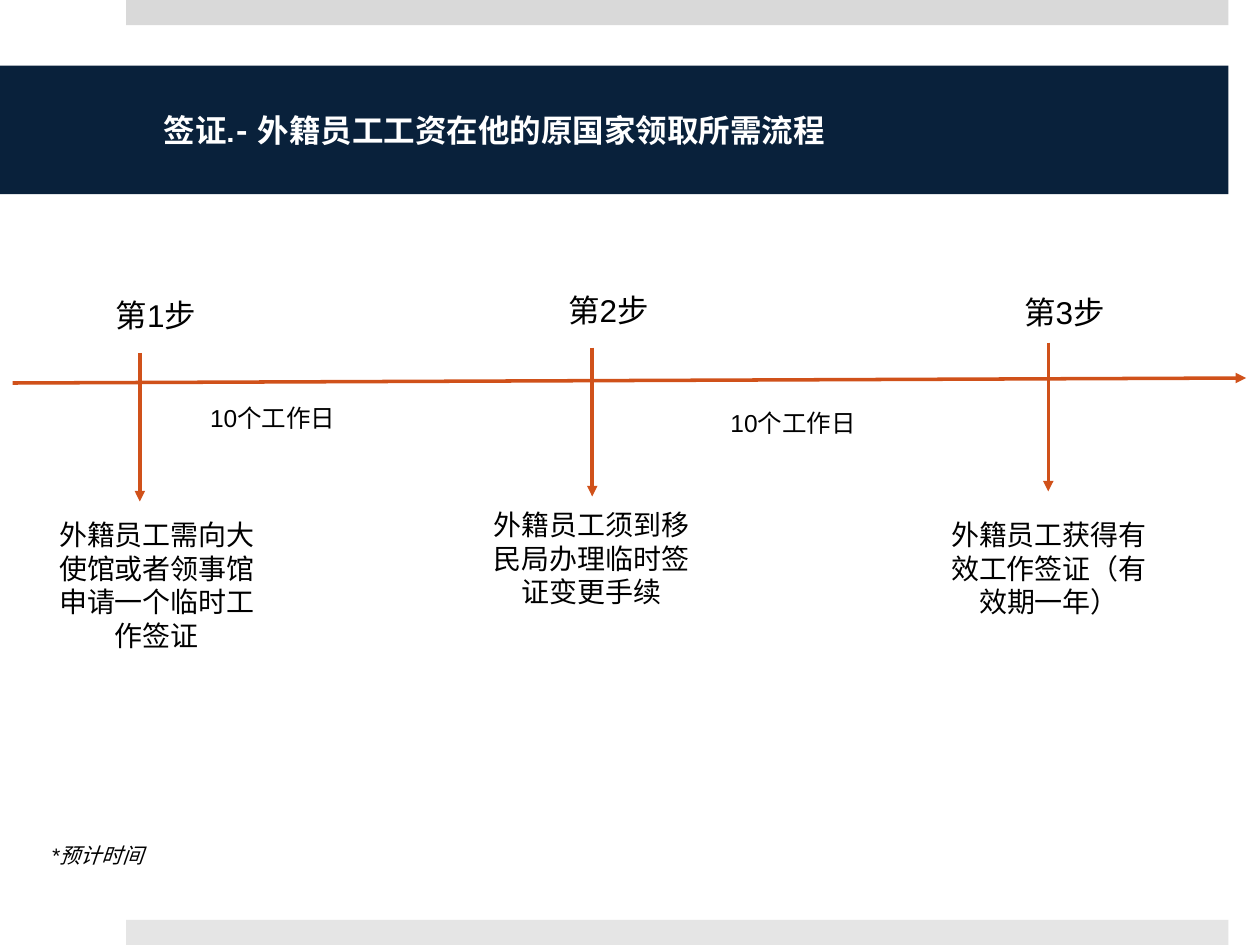
from pptx import Presentation
from pptx.dml.color import RGBColor
from pptx.enum.shapes import MSO_CONNECTOR, MSO_SHAPE
from pptx.enum.text import MSO_ANCHOR, PP_ALIGN
from pptx.oxml.ns import qn
from pptx.util import Inches, Pt
from lxml.etree import SubElement

# Content
TITLE = "签证.- 外籍员工工资在他的原国家领取所需流程"
NOTE = "*预计时间"
# label, label top, arrow x, arrow top, description, (left, top, height)
STEPS = [
    ("第1步", 2.3, 1.11, 2.8, "外籍员工需向大使馆或者领事馆申请一个临时工作签证", (0.32, 4.06, 1.18)),
    ("第2步", 2.26, 4.7, 2.76, "外籍员工须到移民局办理临时签证变更手续", (3.77, 3.98, 0.91)),
    ("第3步", 2.28, 8.32, 2.72, "外籍员工获得有效工作签证（有效期一年）", (7.4, 4.06, 0.91)),
]
DURATIONS = [("10个工作日", 1.24, 3.15), ("10个工作日", 5.37, 3.19)]

COLORS = {"navy": "09213B", "orange": "D0511A", "top": "D9D9D9",
          "bottom": "E5E5E5", "white": "FFFFFF", "black": "000000"}
ARROW_LENGTH = 1.18
TEXT_WIDTH = 1.85
LABEL_WIDTH = 1.09


def color(name):
    return RGBColor.from_string(COLORS[name])


def add_bar(s, left, top, width, height, fill):
    sp = s.shapes.add_shape(MSO_SHAPE.RECTANGLE, Inches(left), Inches(top),
                            Inches(width), Inches(height))
    sp.shadow.inherit = False
    sp.fill.solid()
    sp.fill.fore_color.rgb = color(fill)
    sp.line.fill.background()
    return sp


def write(sp, text, size, font="Arial", ink="black", align=PP_ALIGN.LEFT,
          bold=False, italic=False):
    tf = sp.text_frame
    tf.word_wrap = True
    p = tf.paragraphs[0]
    p.alignment = align
    r = p.add_run()
    r.text = text
    r.font.size = Pt(size)
    r.font.name = font
    r.font.bold = bold
    r.font.italic = italic
    r.font.color.rgb = color(ink)
    return tf


def add_text(s, left, top, width, height, text, size, **fmt):
    sp = s.shapes.add_textbox(Inches(left), Inches(top), Inches(width), Inches(height))
    return write(sp, text, size, **fmt)


def add_arrow(s, x1, y1, x2, y2):
    line = s.shapes.add_connector(MSO_CONNECTOR.STRAIGHT, Inches(x1), Inches(y1),
                                  Inches(x2), Inches(y2))
    line.line.color.rgb = color("orange")
    line.line.width = Pt(2)
    SubElement(line.line._get_or_add_ln(), qn("a:tailEnd"), type="triangle")
    SubElement(line._element.spPr, qn("a:effectLst"))


def main():
    prs = Presentation()
    prs.slide_width, prs.slide_height = Inches(10), Inches(7.5)
    s = prs.slides.add_slide(prs.slide_layouts[6])

    # Edge bars and title band
    add_bar(s, 1, 0, 8.75, 0.2, "top")
    add_bar(s, 1, 7.3, 8.75, 0.2, "bottom")
    band = add_bar(s, 0, 0.52, 9.75, 1.02, "navy")
    tf = write(band, TITLE, 18, font="TeX Gyre Adventor", ink="white", bold=True)
    tf.vertical_anchor = MSO_ANCHOR.MIDDLE
    tf.margin_left, tf.margin_right = Inches(1.3), Inches(0.3)

    # Timeline and its steps
    add_arrow(s, 0.1, 3.04, 9.89, 3)
    for label, label_top, x, arrow_top, text, (left, top, height) in STEPS:
        add_text(s, x - LABEL_WIDTH / 2, label_top, LABEL_WIDTH, 0.4, label, 18,
                 align=PP_ALIGN.RIGHT)
        add_arrow(s, x, arrow_top, x, arrow_top + ARROW_LENGTH)
        add_text(s, left, top, TEXT_WIDTH, height, text, 16, align=PP_ALIGN.CENTER)

    # Time between steps
    for text, left, top in DURATIONS:
        add_text(s, left, top, TEXT_WIDTH, 0.34, text, 14, align=PP_ALIGN.CENTER)

    # Footnote
    add_text(s, 0.31, 6.64, 7.61, 0.3, NOTE, 12, italic=True)

    prs.save("out.pptx")


if __name__ == "__main__":
    main()
